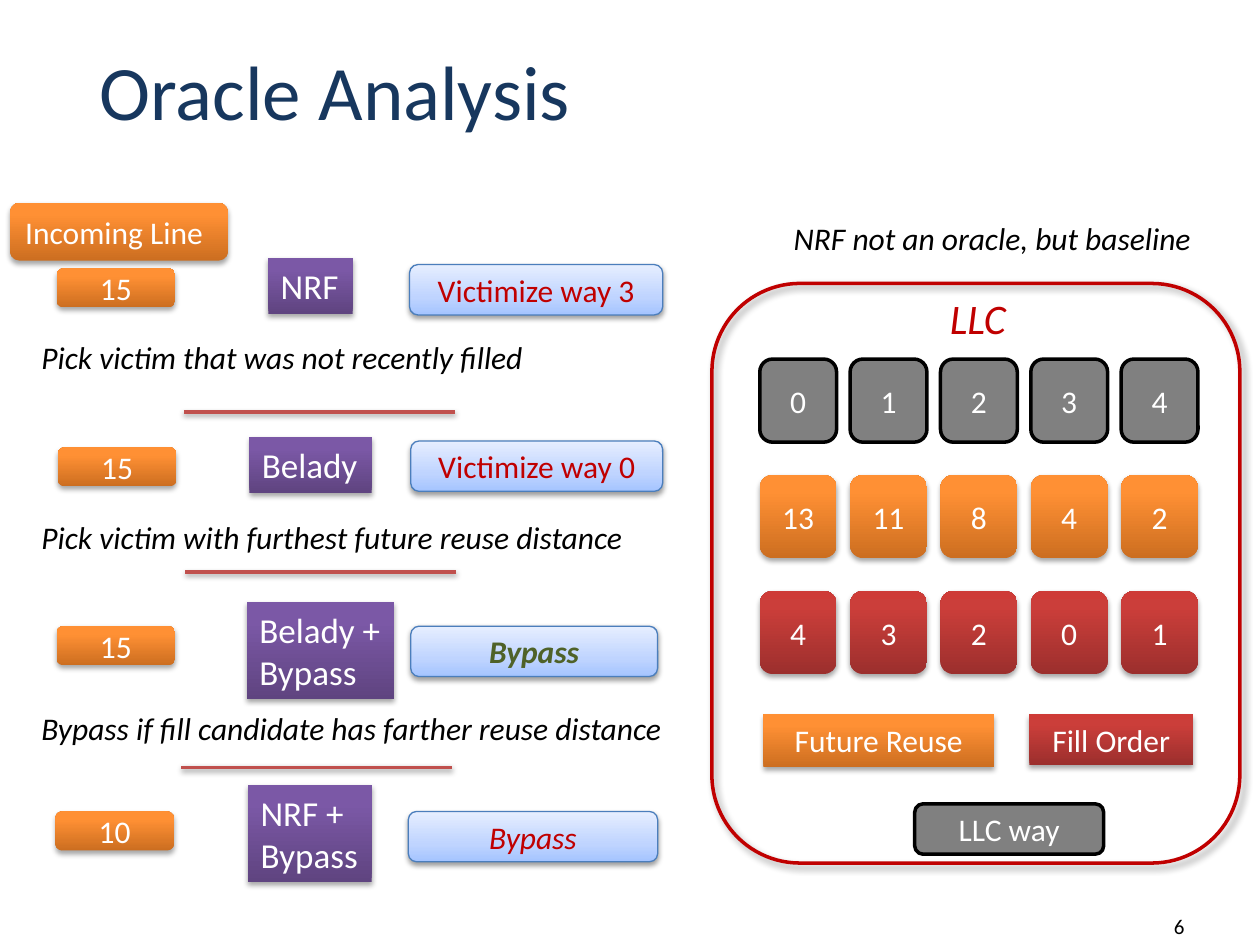
"""Build the Oracle Analysis slide on a grid of 100 columns by 75 rows."""
from pptx import Presentation
from pptx.dml.color import RGBColor
from pptx.enum.shapes import MSO_CONNECTOR, MSO_SHAPE
from pptx.enum.text import MSO_ANCHOR, PP_ALIGN
from pptx.oxml import parse_xml
from pptx.oxml.ns import nsdecls
from pptx.util import Inches, Pt

RECT, ROUND = MSO_SHAPE.RECTANGLE, MSO_SHAPE.ROUNDED_RECTANGLE
LINE = MSO_CONNECTOR.STRAIGHT
LEFT, MID, RIGHT = PP_ALIGN.LEFT, PP_ALIGN.CENTER, PP_ALIGN.RIGHT
TOP, CENTER = MSO_ANCHOR.TOP, MSO_ANCHOR.MIDDLE
FONT = "Calibri"
UNIT = Inches(0.1)

COLORS = {
    "navy": "17375E", "black": "000000", "white": "FFFFFF", "gray": "808080",
    "red": "C00000", "green": "4F6228", "rule": "C0504D", "edge": "4B7EBC",
}
FADES = {
    "orange": [(0, "CC6E20"), (80, "FF9034"), (100, "FF9136")],
    "brick": [(0, "9C2F2D"), (80, "CB3E3A"), (100, "CE3B37")],
    "purple": [(0, "5F4480"), (80, "7B58A6"), (100, "7C57A8")],
    "sky": [(0, "A4C4FF"), (35, "BFD4FF"), (100, "E6EEFF")],
}
SHADES = {
    "solid": (35, 3.1, 1.8, 90),
    "thin": (38, 3.1, 1.6, 90),
    "frame": (40, 4, 3, 45),
}

STAGES = [
    ("15", (4.5, 21.3), "NRF", (21.3, 20.5, 6.7, 4.4),
     "Victimize way 3", (32.5, 21, 20.1, 4), {"color": "red"}),
    ("15", (4.6, 35.5), "Belady", (19.8, 34.7, 9.7, 4.4),
     "Victimize way 0", (32.6, 35, 20, 4), {"color": "red"}),
    ("15", (4.5, 49.7), "Belady +\nBypass", (19.6, 47.8, 11.7, 7.7),
     "Bypass", (32.6, 49.7, 19.6, 4),
     {"color": "green", "bold": True, "italic": True}),
    ("10", (4.4, 64.4), "NRF +\nBypass", (19.7, 62.3, 9.8, 7.7),
     "Bypass", (32.4, 64.4, 19.8, 4), {"color": "red", "italic": True}),
]
NOTES = [
    ("Pick victim that was not recently filled", (2.3, 26.3, 48.2, 4)),
    ("Pick victim with furthest future reuse distance", (2.3, 40.6, 48.2, 4)),
    ("Bypass if fill candidate has farther reuse distance",
     (2.3, 55.8, 51.4, 4)),
    ("NRF not an oracle, but baseline", (62, 16.9, 33.9, 4)),
]
RULES = [(14.6, 32.7), (14.7, 45.4), (14.4, 60.9)]
WAYS = [("gray", "01234"), ("orange", ["13", "11", "8", "4", "2"]),
        ("brick", "43201")]


def rgb(name):
    """Return the named colour."""
    return RGBColor.from_string(COLORS[name])


def grid(*spots):
    """Turn grid columns and rows into slide lengths."""
    return [round(spot * UNIT) for spot in spots]


def write(shape, text, size=18, color="white", align=LEFT, anchor=CENTER,
          wrap=True, bold=False, italic=False):
    """Fill a shape's frame with evenly styled paragraphs."""
    frame = shape.text_frame
    frame.text = text
    frame.word_wrap = wrap
    frame.vertical_anchor = anchor
    for para in frame.paragraphs:
        para.alignment = align
        font = para.font
        font.name, font.size = FONT, Pt(size)
        font.bold, font.italic = bold, italic
        font.color.rgb = rgb(color)


def cast(shape, name=None):
    """Set the named shadow, or none."""
    inner = ""
    if name:
        alpha, blur, dist, turn = SHADES[name]
        inner = (f'<a:outerShdw blurRad="{Pt(blur)}" dist="{Pt(dist)}" '
                 f'dir="{turn * 60000}" rotWithShape="0">'
                 f'<a:srgbClr val="000000"><a:alpha val="{alpha * 1000}"/>'
                 '</a:srgbClr></a:outerShdw>')
    shape._element.spPr.append(parse_xml(
        f'<a:effectLst {nsdecls("a")}>{inner}</a:effectLst>'))


def fade(shape, name):
    """Fill a shape with a named gradient that runs upward."""
    stops = "".join(
        f'<a:gs pos="{pos * 1000}"><a:srgbClr val="{tint}"/></a:gs>'
        for pos, tint in FADES[name])
    shape.fill.background()
    props = shape._element.spPr
    props.replace(props.find("{*}noFill"), parse_xml(
        f'<a:gradFill {nsdecls("a")} rotWithShape="1"><a:gsLst>{stops}'
        '</a:gsLst><a:lin ang="16200000" scaled="0"/></a:gradFill>'))


def block(slide, kind, box, fill=None, edge=None, width=2, shade=None):
    """Add a box with its fill, outline and shadow."""
    shape = slide.shapes.add_shape(kind, *grid(*box))
    if fill in FADES:
        fade(shape, fill)
    elif fill:
        shape.fill.solid()
        shape.fill.fore_color.rgb = rgb(fill)
    else:
        shape.fill.background()
    if edge:
        shape.line.color.rgb = rgb(edge)
        shape.line.width = Pt(width)
    else:
        shape.line.fill.background()
    cast(shape, shade)
    return shape


def tile(slide, box, text, fill, kind=ROUND, **style):
    """Add a labelled tile, outlined if gray and shadowed otherwise."""
    look = {"edge": "black"} if fill == "gray" else {"shade": "solid"}
    write(block(slide, kind, box, fill, **look), text, **style)


def label(slide, box, text, **style):
    """Add a free text label."""
    shape = slide.shapes.add_textbox(*grid(*box))
    write(shape, text, **{"color": "black", "anchor": TOP, **style})


def rule(slide, left, top):
    """Add a level line between two stages."""
    line = slide.shapes.add_connector(LINE, *grid(left, top, left + 21.5, top))
    line.line.color.rgb = rgb("rule")
    line.line.width = Pt(2)
    cast(line, "thin")


def stage(slide, line, spot, name, tag, result, box, style):
    """Add one policy: incoming line, policy name and result."""
    tile(slide, tag, name, "purple", RECT, size=20, anchor=TOP, wrap=False)
    shape = block(slide, ROUND, box, "sky", "edge", 0.75, "thin")
    write(shape, result, align=MID, **style)
    tile(slide, (*spot, 9.4, 3.1), line, "orange", align=MID)


def cache(slide):
    """Add the cache with its rows of ways and its legend."""
    for row, (fill, values) in enumerate(WAYS):
        for col, value in enumerate(values):
            box = (60.3 + 7.17 * col, 28.5 + 9.2 * row, 6.1, 6.6)
            tile(slide, box, value, fill, align=MID)
    tile(slide, (60.6, 56.7, 18.3, 4.2), "Future Reuse", "orange", RECT,
         align=MID, anchor=TOP)
    tile(slide, (81.7, 56.7, 13, 4), "Fill Order", "brick", RECT,
         align=MID, anchor=TOP)
    block(slide, ROUND, (56.5, 22.5, 41.9, 46), edge="red", shade="frame")
    label(slide, (74.4, 22.7, 6.5, 5), "LLC", size=24, color="red",
          italic=True, wrap=False)
    tile(slide, (72.6, 63.8, 15, 4), "LLC way", "gray", align=MID)


def main():
    """Build and save the slide."""
    deck = Presentation()
    deck.slide_width, deck.slide_height = grid(100, 75)
    slide = deck.slides.add_slide(deck.slide_layouts[5])
    title = slide.shapes.title
    title.left, title.top, title.width, title.height = grid(6.9, 0.9, 90, 12.5)
    write(title, "Oracle Analysis", size=44, color="navy")
    cache(slide)
    tile(slide, (0.8, 16.1, 17.3, 4.6), "Incoming Line", "orange")
    for item in STAGES:
        stage(slide, *item)
    for text, box in NOTES:
        label(slide, box, text, italic=True, wrap=False)
    for spot in RULES:
        rule(slide, *spot)
    label(slide, (71.7, 72, 23.3, 4), "6", size=12, align=RIGHT)
    deck.save("out.pptx")


if __name__ == "__main__":
    main()
